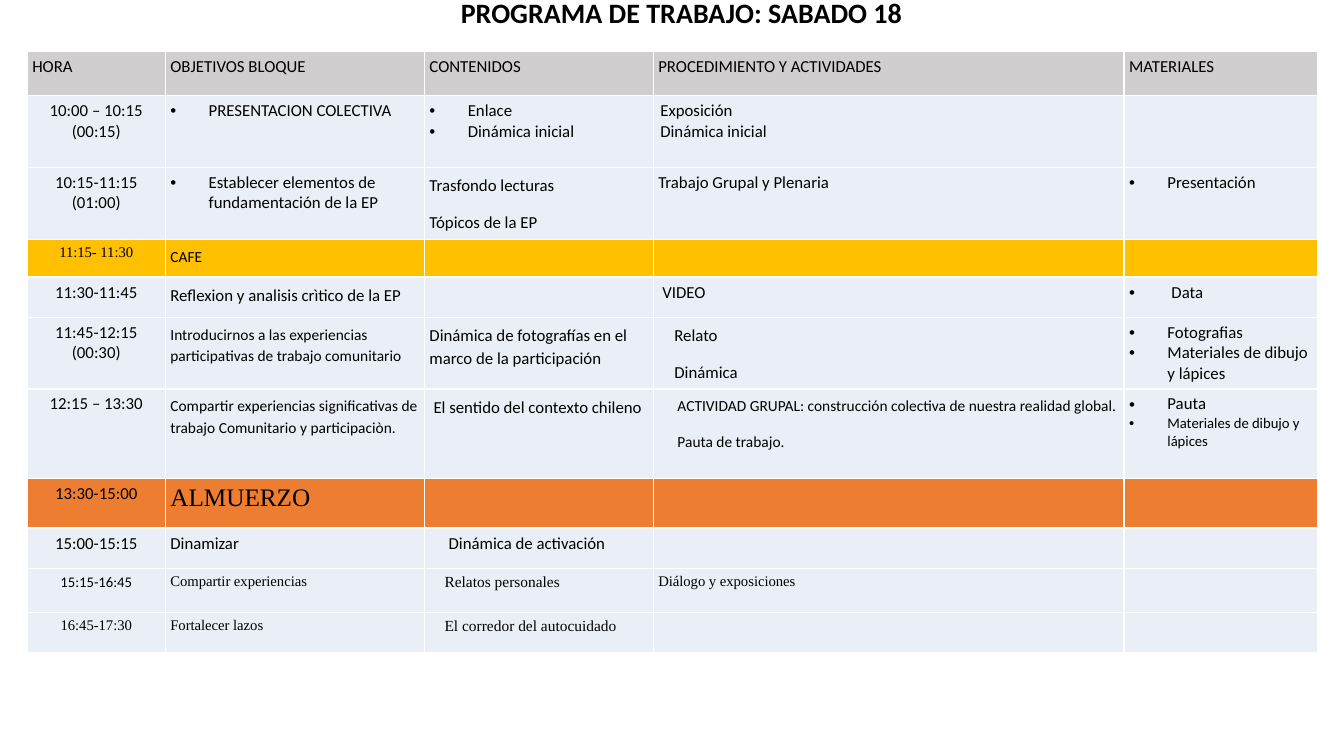
"""Builds the Saturday work programme slide with its timetable."""
from lxml.etree import SubElement
from pptx import Presentation
from pptx.dml.color import RGBColor
from pptx.enum.text import MSO_ANCHOR, MSO_AUTO_SIZE, PP_ALIGN
from pptx.oxml.ns import qn
from pptx.util import Inches, Pt

COLORS = {"text": "000000", "header": "D0CECE", "session": "EAEFF7",
          "coffee": "FFC000", "lunch": "ED7D31"}
SANS, SERIF = "Calibri", "Times New Roman"
HEADING = "PROGRAMA DE TRABAJO: SABADO 18"
HEADING_BOX = {"left": 0.38, "top": 0, "width": 12.76, "height": 0.28}
TABLE_LEFT, TABLE_TOP = 0.27, 0.51
COLUMN_WIDTHS = [1.37, 2.57, 2.27, 4.67, 1.92]
MARGINS = ("margin_left", "margin_top", "margin_right", "margin_bottom")

STYLES = {
    "plain": {},
    "time": {"alignment": PP_ALIGN.CENTER},
    "bullet": {},
    "spaced": {"line_spacing": 1.15, "space_after": Pt(10)},
}


def line(text, style="plain", size=12, font=SANS, indent=0.0):
    """Describes one paragraph."""
    return {"text": text, "style": style, "size": size, "font": font, "indent": indent}


def time(*texts, size=12, font=SANS):
    """Describes the centred lines of an hour cell."""
    return [line(text, "time", size, font) for text in texts]


def bullet(text, size=12, indent=0.38):
    """Describes one bulleted paragraph."""
    return line(text, "bullet", size, indent=indent)


def spaced(text, size=12, indent=0.0):
    """Describes one paragraph with open spacing."""
    return line(text, "spaced", size, indent=indent)


def serif(text, size=10.5, indent=0.0):
    """Describes one paragraph in the serif font."""
    return line(text, "plain", size, SERIF, indent)


ROWS = [
    ("header", 0.44, [[line("HORA")], [line("OBJETIVOS BLOQUE")], [line("CONTENIDOS")],
                      [line("PROCEDIMIENTO Y ACTIVIDADES")], [line("MATERIALES")]]),
    ("session", 0.71, [time("10:00 – 10:15", "(00:15)"),
                       [bullet("PRESENTACION COLECTIVA")],
                       [bullet("Enlace"), bullet("Dinámica inicial")],
                       [line("Exposición", indent=0.02),
                        line("Dinámica inicial", indent=0.02)], []]),
    ("session", 0.72, [time("10:15-11:15", "(01:00)"),
                       [bullet("Establecer elementos de fundamentación de la EP")],
                       [spaced("Trasfondo lecturas"), spaced("Tópicos de la EP")],
                       [line("Trabajo Grupal y Plenaria")], [bullet("Presentación")]]),
    ("coffee", 0.37, [time("11:15- 11:30", size=10.5, font=SERIF),
                      [spaced("CAFE", 11)], [], [], []]),
    ("session", 0.4, [time("11:30-11:45"),
                      [spaced("Reflexion y analisis crìtico de la EP")], [],
                      [line("VIDEO", indent=0.04)], [bullet("Data", indent=0.42)]]),
    ("session", 0.71, [time("11:45-12:15", "(00:30)"),
                       [spaced("Introducirnos a las experiencias participativas "
                               "de trabajo comunitario", 11)],
                       [spaced("Dinámica de fotografías en el marco de la participación")],
                       [spaced("Relato", indent=0.16), spaced("Dinámica", indent=0.16)],
                       [bullet("Fotografias"), bullet("Materiales de dibujo y lápices")]]),
    ("session", 0.89, [time("12:15 – 13:30"),
                       [spaced("Compartir experiencias significativas de trabajo "
                               "Comunitario y participaciòn.", 11)],
                       [spaced("El sentido del contexto chileno", indent=0.04)],
                       [spaced("ACTIVIDAD GRUPAL: construcción colectiva de nuestra "
                               "realidad global.", 11, 0.19),
                        spaced("Pauta de trabajo.", 11, 0.19)],
                       [bullet("Pauta"), bullet("Materiales de dibujo y lápices", 10.5)]]),
    ("lunch", 0.49, [time("13:30-15:00"), [serif("ALMUERZO", 18)], [], [], []]),
    ("session", 0.4, [time("15:00-15:15"), [line("Dinamizar")],
                      [line("Dinámica de activación", indent=0.19)], [], []]),
    ("session", 0.44, [time("15:15-16:45", size=10.5), [serif("Compartir experiencias")],
                       [serif("Relatos personales", 11, 0.15)],
                       [serif("Diálogo y exposiciones")], []]),
    ("session", 0.4, [time("16:45-17:30", size=10.5, font=SERIF), [serif("Fortalecer lazos")],
                      [serif("El corredor del autocuidado", 11, 0.15)], [], []]),
]


def add_run(paragraph, text, size, font, bold=False):
    """Adds formatted text to a paragraph."""
    run = paragraph.add_run()
    run.text = text
    for name, value in {"size": Pt(size), "name": font, "bold": bold}.items():
        setattr(run.font, name, value)
    run.font.color.rgb = RGBColor.from_string(COLORS["text"])


def write_line(paragraph, entry):
    """Writes one described paragraph."""
    for name, value in STYLES[entry["style"]].items():
        setattr(paragraph, name, value)
    properties = paragraph._p.get_or_add_pPr()
    indent = Inches(entry["indent"])
    properties.set("marL", str(indent))
    if entry["style"] == "bullet":
        properties.set("indent", str(-indent))
        SubElement(properties, qn("a:buFont"), typeface="Arial")
        SubElement(properties, qn("a:buChar"), char="•")
    add_run(paragraph, entry["text"], entry["size"], entry["font"])


def fill_cell(cell, entries, color):
    """Fills a cell with its colour and paragraphs."""
    cell.fill.solid()
    cell.fill.fore_color.rgb = RGBColor.from_string(color)
    for margin in MARGINS:
        setattr(cell, margin, Inches(0.05))
    frame = cell.text_frame
    for index, entry in enumerate(entries):
        write_line(frame.add_paragraph() if index else frame.paragraphs[0], entry)
    if not entries:
        SubElement(frame.paragraphs[0]._p, qn("a:endParaRPr"), sz="1200")


def add_heading(slide):
    """Writes the slide title."""
    heading = slide.shapes.title
    for name, value in HEADING_BOX.items():
        setattr(heading, name, Inches(value))
    frame = heading.text_frame
    frame_format = {"word_wrap": True, "auto_size": MSO_AUTO_SIZE.NONE,
                    "vertical_anchor": MSO_ANCHOR.MIDDLE, **dict.fromkeys(MARGINS, 0)}
    for name, value in frame_format.items():
        setattr(frame, name, value)
    paragraph = frame.paragraphs[0]
    paragraph.alignment = PP_ALIGN.CENTER
    paragraph.line_spacing = 0.9
    add_run(paragraph, HEADING, 20, SANS, bold=True)


def add_timetable(slide):
    """Builds the timetable."""
    total_height = sum(height for _, height, _ in ROWS)
    timetable = slide.shapes.add_table(
        len(ROWS), len(COLUMN_WIDTHS), Inches(TABLE_LEFT), Inches(TABLE_TOP),
        Inches(sum(COLUMN_WIDTHS)), Inches(total_height)).table
    timetable.first_row = timetable.horz_banding = False
    for column, width in zip(timetable.columns, COLUMN_WIDTHS):
        column.width = Inches(width)
    for row, (kind, height, contents) in zip(timetable.rows, ROWS):
        row.height = Inches(height)
        for cell, entries in zip(row.cells, contents):
            fill_cell(cell, entries, COLORS[kind])


def main():
    """Creates and saves the presentation."""
    presentation = Presentation()
    presentation.slide_width = Inches(13.33)
    presentation.slide_height = Inches(7.5)
    slide = presentation.slides.add_slide(presentation.slide_layouts[5])
    add_heading(slide)
    add_timetable(slide)
    presentation.save("out.pptx")


if __name__ == "__main__":
    main()
